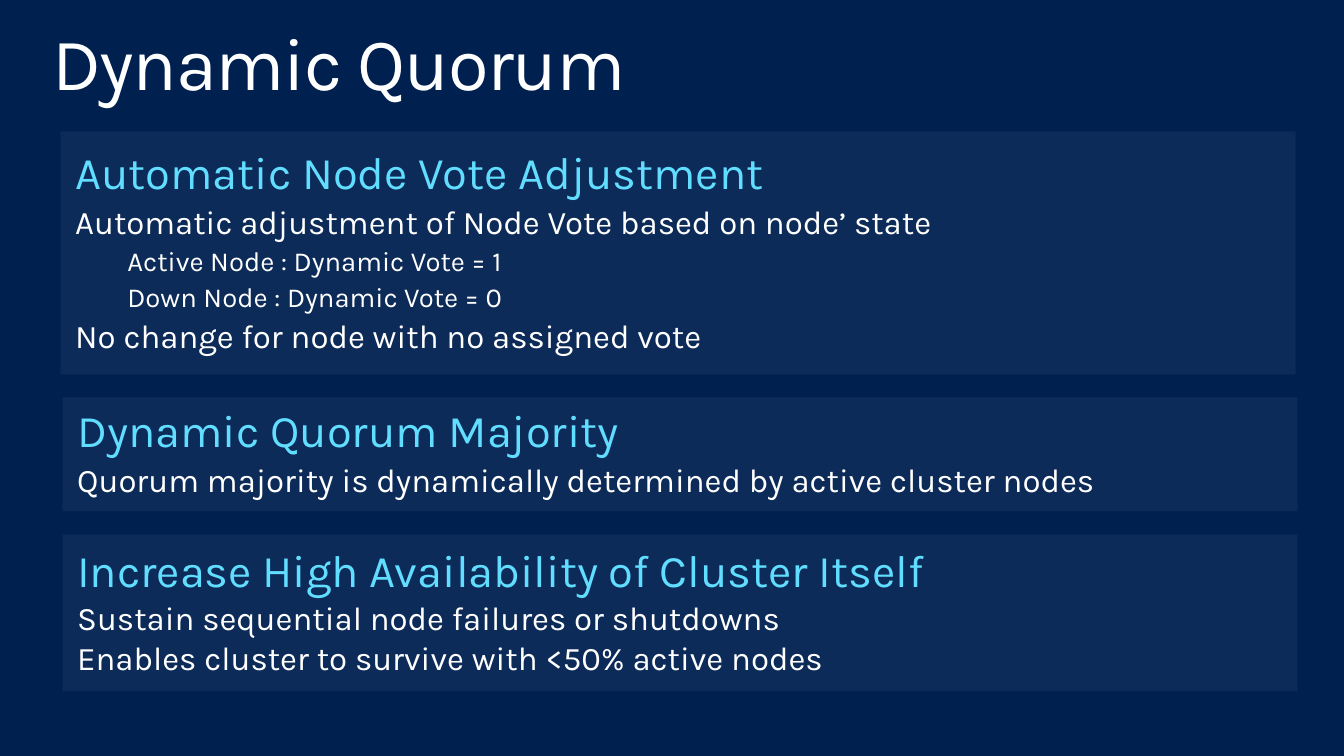
from dataclasses import dataclass

from lxml import etree
from pptx import Presentation
from pptx import util as u
from pptx.dml.color import RGBColor
from pptx.enum import shapes, text
from pptx.oxml import ns

NAVY = RGBColor(0x00, 0x20, 0x50)
WHITE = RGBColor(0xFF, 0xFF, 0xFF)
CYAN = RGBColor(0x61, 0xDD, 0xFF)
FONT = "Karla"
WIDTH = 900
TIGHT = 0.9
GAP = 0.22


@dataclass(frozen=True)
class Line:
    words: str
    size: float = 24
    color: RGBColor = WHITE
    indent: float = 0
    tight: bool = True


@dataclass(frozen=True)
class Panel:
    left: float
    top: float
    height: float
    lines: tuple[Line, ...]


def head(words: str) -> Line:
    return Line(words, size=33, color=CYAN)


def sub(words: str) -> Line:
    return Line(words, size=20, indent=38)


PANELS = (
    Panel(44, 95.8, 177, (
        head("Automatic Node Vote Adjustment"),
        Line("Automatic adjustment of Node Vote based on node’ state"),
        sub("Active Node : Dynamic Vote = 1"),
        sub("Down Node : Dynamic Vote = 0"),
        Line("No change for node with no assigned vote"),
    )),
    Panel(45.4, 289.5, 82.8, (
        head("Dynamic Quorum Majority"),
        Line("Quorum majority is dynamically determined by active cluster nodes"),
    )),
    Panel(45.4, 389.5, 113.8, (
        head("Increase High Availability of Cluster Itself"),
        Line("Sustain sequential node failures or shutdowns", tight=False),
        Line("Enables cluster to survive with <50% active nodes", tight=False),
    )),
)


def write(para, words: str, *, size: float, color: RGBColor = WHITE,
          indent: float = 0, space: float = 0, pitch: float = 1,
          track: float = 0) -> None:
    para.alignment = text.PP_ALIGN.LEFT
    para.line_spacing = pitch
    para.space_before = u.Pt(space)
    if indent:
        para._p.get_or_add_pPr().set("marL", str(u.Pt(indent)))
    run = para.add_run()
    run.text = words
    run.font.name = FONT
    run.font.size = u.Pt(size)
    run.font.color.rgb = color
    if track:
        run._r.get_or_add_rPr().set("spc", str(round(track * 100)))


def set_frame(frame, anchor: text.MSO_ANCHOR, left: float, right: float,
              edge: float) -> None:
    frame.word_wrap = True
    frame.auto_size = text.MSO_AUTO_SIZE.NONE
    frame.vertical_anchor = anchor
    frame.margin_left, frame.margin_right = u.Pt(left), u.Pt(right)
    frame.margin_top = frame.margin_bottom = u.Pt(edge)


def add_title(slide, words: str) -> None:
    title = slide.shapes.title
    title.left, title.top = u.Pt(26.6), u.Pt(12.2)
    title.width, title.height = u.Pt(936), u.Pt(72)
    set_frame(title.text_frame, text.MSO_ANCHOR.TOP, 11.5, 11.5, 7.2)
    write(title.text_frame.paragraphs[0], words, size=54, pitch=TIGHT, track=-1)


def add_panel(slide, panel: Panel) -> None:
    box = slide.shapes.add_shape(
        shapes.MSO_SHAPE.RECTANGLE, u.Pt(panel.left), u.Pt(panel.top),
        u.Pt(WIDTH), u.Pt(panel.height))
    box.shadow.inherit = False
    box.line.fill.background()
    box.fill.solid()
    box.fill.fore_color.rgb = WHITE
    tint = box._element.spPr.find(ns.qn("a:solidFill"))[0]
    etree.SubElement(tint, ns.qn("a:alpha"), val="5000")
    frame = box.text_frame
    set_frame(frame, text.MSO_ANCHOR.MIDDLE, 10.8, 14.4, 0)
    for i, line in enumerate(panel.lines):
        para = frame.add_paragraph() if i else frame.paragraphs[0]
        write(para, line.words, size=line.size, color=line.color,
              indent=line.indent,
              space=round(line.size * GAP, 1) if line.tight else 0,
              pitch=TIGHT if line.tight else 1)


def main() -> None:
    deck = Presentation()
    deck.slide_width, deck.slide_height = u.Pt(979.2), u.Pt(550.8)
    slide = deck.slides.add_slide(deck.slide_layouts[5])
    slide.background.fill.solid()
    slide.background.fill.fore_color.rgb = NAVY
    add_title(slide, "Dynamic Quorum")
    for panel in PANELS:
        add_panel(slide, panel)
    deck.save("out.pptx")


if __name__ == "__main__":
    main()
